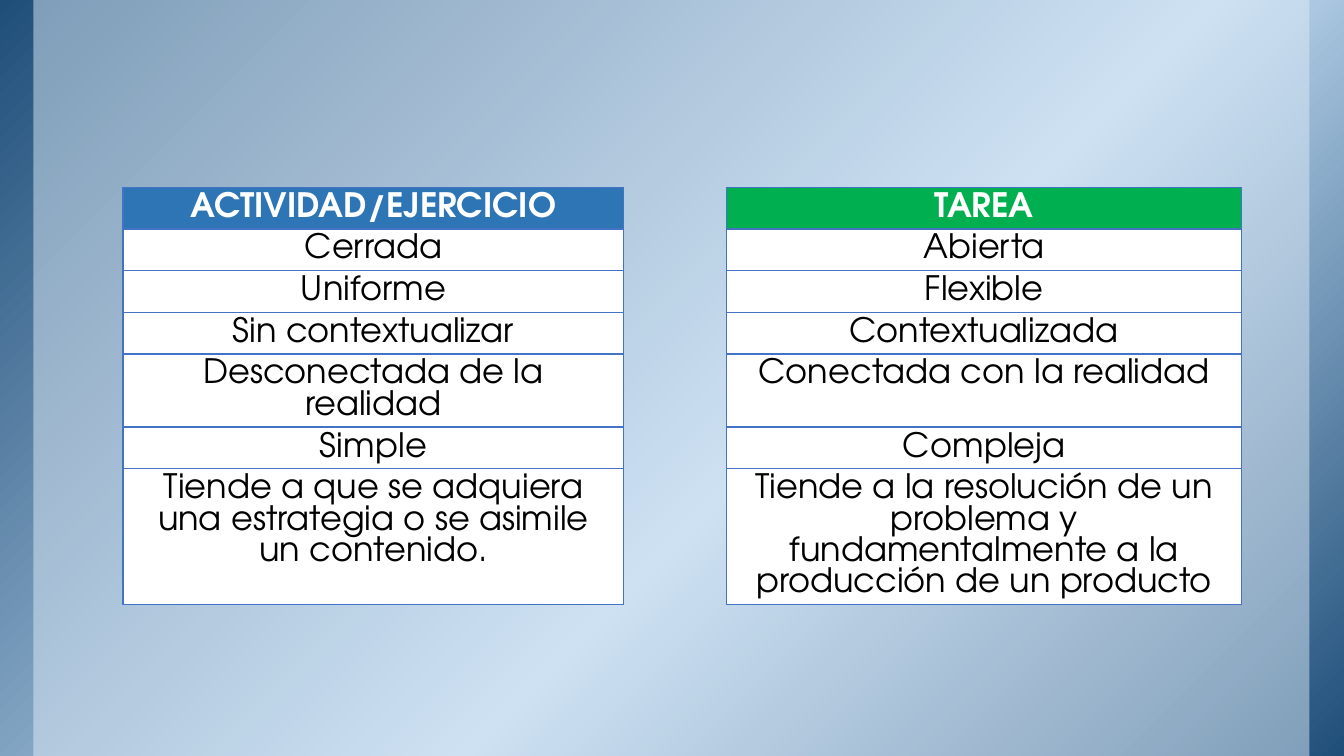
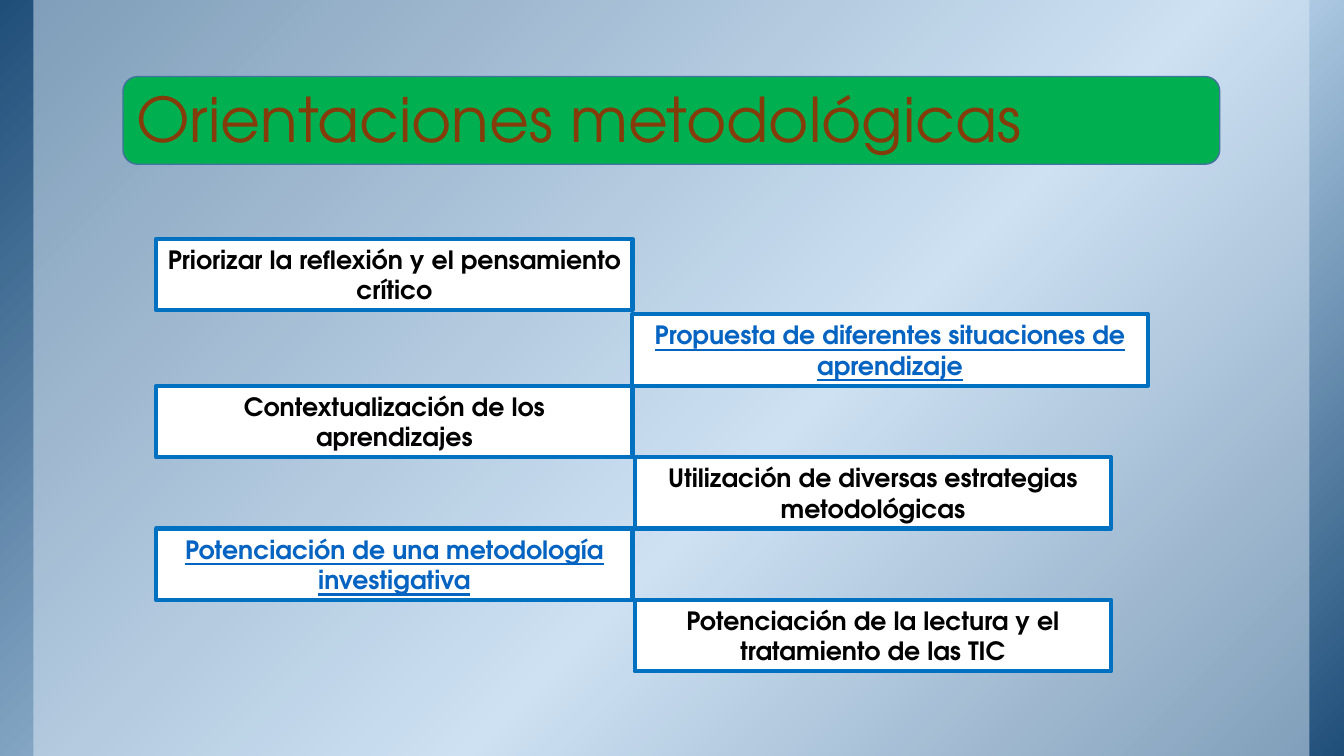
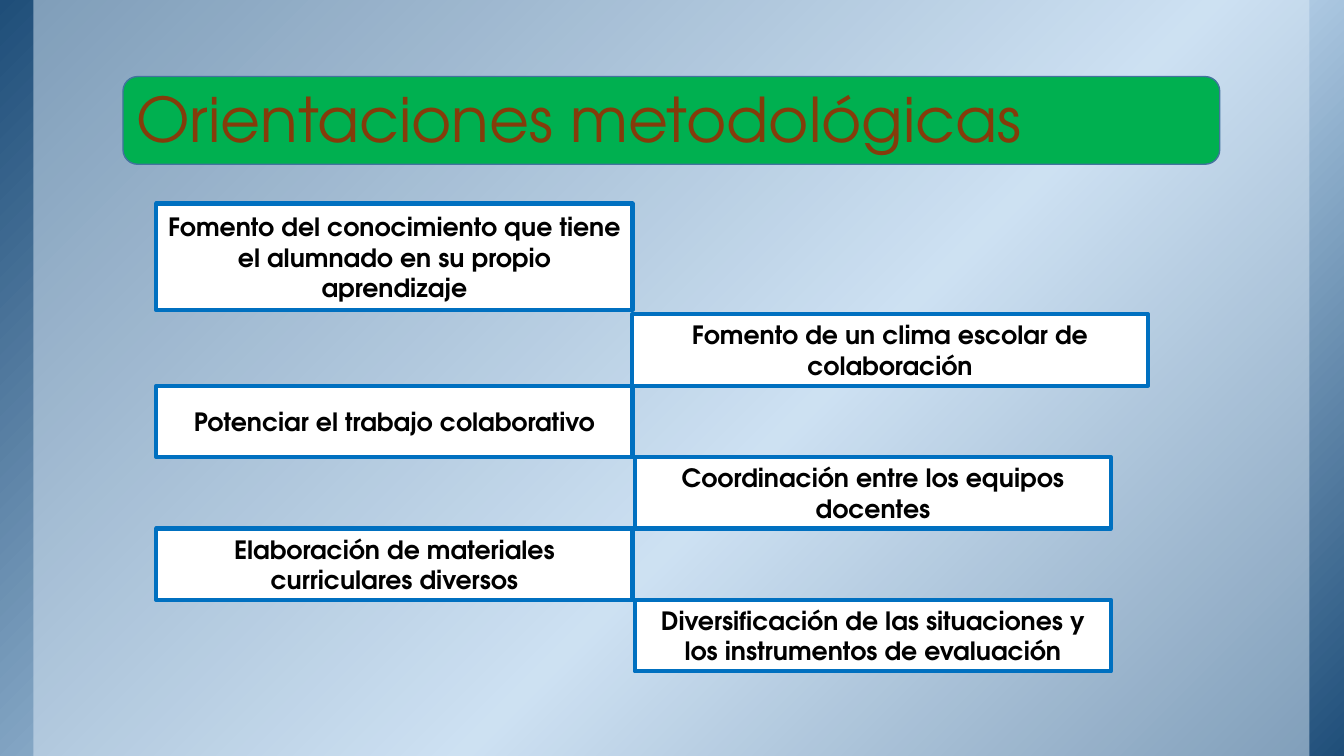
from lxml import etree
from pptx import Presentation
from pptx import util as u
from pptx.dml.color import RGBColor
from pptx.enum import shapes, text
from pptx.oxml import parse_xml
from pptx.oxml.ns import nsdecls, qn

NAVY = RGBColor(0x1F, 0x4E, 0x79)
SKY = RGBColor(0xBD, 0xD7, 0xEE)
MIST = RGBColor(0xDE, 0xEB, 0xF7)
GREEN = RGBColor(0x00, 0xB0, 0x50)
BANNER_LINE = RGBColor(0x43, 0x73, 0x9E)
BROWN = RGBColor(0x84, 0x3C, 0x0B)
BLUE = RGBColor(0x2E, 0x75, 0xB6)
BORDER = RGBColor(0x44, 0x72, 0xC4)
FRAME = RGBColor(0x00, 0x70, 0xC0)
LINK = RGBColor(0x05, 0x63, 0xC1)
WHITE = RGBColor(0xFF, 0xFF, 0xFF)
BLACK = RGBColor(0x00, 0x00, 0x00)

WIDTH, HEIGHT = 33.87, 19.05
FONT = "TeX Gyre Adventor"
PLAIN_STYLE = "{2D5ABB26-0587-4C30-8999-92F81FD0307C}"
TITLE_ONLY, BLANK = 5, 6
TITLE = "Orientaciones metodológicas"

COMPARISON = [
    ("ACTIVIDAD/EJERCICIO", "TAREA"),
    ("Cerrada", "Abierta"),
    ("Uniforme", "Flexible"),
    ("Sin contextualizar", "Contextualizada"),
    ("Desconectada de la realidad", "Conectada con la realidad"),
    ("Simple", "Compleja"),
    ("Tiende a que se adquiera una estrategia o se asimile un contenido.",
     "Tiende a la resolución de un problema y fundamentalmente a la "
     "producción de un producto"),
]
COLUMN_WIDTHS = [12.62, 2.59, 12.98]
ROW_HEIGHTS = [1.05, 1.05, 1.05, 1.05, 1.84, 1.05, 3.41]

METHODS = [
    "Priorizar la reflexión y el pensamiento crítico",
    "Propuesta de diferentes situaciones de aprendizaje",
    "Contextualización de los aprendizajes",
    "Utilización de diversas estrategias metodológicas",
    "Potenciación de una metodología investigativa",
    "Potenciación de la lectura y el tratamiento de las TIC",
]
PRACTICES = [
    "Fomento del conocimiento que tiene el alumnado en su propio aprendizaje",
    "Fomento de un clima escolar de colaboración",
    "Potenciar el trabajo colaborativo",
    "Coordinación entre los equipos docentes",
    "Elaboración de materiales curriculares diversos",
    "Diversificación de las situaciones y los instrumentos de evaluación",
]


class Deck:
    def __init__(self):
        self.file = Presentation()
        self.file.slide_width = u.Cm(WIDTH)
        self.file.slide_height = u.Cm(HEIGHT)
        self.page = None

    def add_page(self, layout):
        self.page = self.file.slides.add_slide(self.file.slide_layouts[layout])

    def style(self, paragraph, size, color, bold=False, underline=False,
              align=text.PP_ALIGN.CENTER):
        paragraph.alignment = align
        for span in paragraph.runs:
            span.font.name = FONT
            span.font.size = u.Pt(size)
            span.font.bold = bold
            span.font.underline = underline
            span.font.color.rgb = color

    def shape(self, kind, left, top, width, height, fill, line=None, weight=1):
        box = self.page.shapes.add_shape(
            kind, u.Cm(left), u.Cm(top), u.Cm(width), u.Cm(height))
        box.shadow.inherit = False
        box.fill.solid()
        box.fill.fore_color.rgb = fill
        if line is None:
            box.line.fill.background()
        else:
            box.line.color.rgb = line
            box.line.width = u.Pt(weight)
        return box

    def master_background(self):
        rectangle = shapes.MSO_SHAPE.RECTANGLE
        backdrop = self.shape(rectangle, 0, 0, WIDTH, HEIGHT, NAVY)
        stops = "".join(
            f'<a:gs pos="{place * 1000}"><a:srgbClr val="{color}"/></a:gs>'
            for place, color in ((0, NAVY), (58, SKY), (100, NAVY)))
        gradient = parse_xml(
            f'<a:gradFill {nsdecls("a")} rotWithShape="1"><a:gsLst>{stops}</a:gsLst>'
            '<a:lin ang="2700000" scaled="0"/></a:gradFill>')
        solid = backdrop.element.spPr.find(qn("a:solidFill"))
        solid.getparent().replace(solid, gradient)

        veil = self.shape(rectangle, 0.84, 0, 32.16, HEIGHT, MIST)
        color = veil.element.spPr.find(f'{qn("a:solidFill")}/{qn("a:srgbClr")}')
        etree.SubElement(color, qn("a:alpha")).set("val", "50000")

        tree = self.file.slide_master.shapes.element
        for index, layer in enumerate((backdrop, veil)):
            layer.element.nvSpPr.cNvPr.set("id", str(101 + index))
            tree.insert(2 + index, layer.element)

    def title(self, words):
        banner = self.shape(shapes.MSO_SHAPE.ROUNDED_RECTANGLE,
                            3.1, 1.93, 27.64, 2.21, GREEN, BANNER_LINE)
        self.page.shapes.element.insert(2, banner.element)
        title = self.page.shapes.title
        title.left, title.top = u.Cm(3.1), u.Cm(0.2)
        title.width, title.height = u.Cm(28.22), u.Cm(3.89)
        frame = title.text_frame
        frame.text = words
        frame.word_wrap = True
        frame.auto_size = text.MSO_AUTO_SIZE.NONE
        frame.vertical_anchor = text.MSO_ANCHOR.BOTTOM
        frame.margin_left = frame.margin_right = u.Cm(0.33)
        frame.margin_top = frame.margin_bottom = u.Cm(0.18)
        paragraph = frame.paragraphs[0]
        paragraph.line_spacing = 0.85
        self.style(paragraph, 44, BROWN, align=text.PP_ALIGN.LEFT)

    def step(self, words, left, top, width, height, linked):
        box = self.shape(shapes.MSO_SHAPE.RECTANGLE,
                         left, top, width, height, WHITE, FRAME, 3)
        frame = box.text_frame
        frame.text = words
        frame.word_wrap = True
        frame.vertical_anchor = text.MSO_ANCHOR.MIDDLE
        self.style(frame.paragraphs[0], 18, LINK if linked else BLACK,
                   bold=True, underline=linked)

    def staircase(self, steps, first_height=1.8, linked=()):
        pitch, second_top = 1.8, 7.92
        for index, words in enumerate(steps):
            left, width, height = (16 if index % 2 else 3.94), 12, pitch
            top = second_top + pitch * (index - 1)
            if index == 0:
                height = first_height
                top = 7.82 - height
            elif index == 1:
                left, width = 15.93, 13
            self.step(words, left, top, width, height, index in linked)

    def cell(self, cell, words, fill, color, bold, bottom):
        cell.text = words
        paragraph = cell.text_frame.paragraphs[0]
        paragraph.line_spacing = u.Pt(22.4)
        self.style(paragraph, 24, color, bold)
        cell.fill.solid()
        cell.fill.fore_color.rgb = fill
        properties = cell._tc.get_or_add_tcPr()
        for index, side in enumerate("LRTB"):
            weight = u.Pt(bottom if side == "B" else 1)
            properties.insert(index, parse_xml(
                f'<a:ln{side} {nsdecls("a")} w="{weight}"><a:solidFill>'
                f'<a:srgbClr val="{BORDER}"/></a:solidFill></a:ln{side}>'))

    def comparison(self, rows, left, top):
        frame = self.page.shapes.add_table(
            len(rows), len(COLUMN_WIDTHS), u.Cm(left), u.Cm(top),
            u.Cm(sum(COLUMN_WIDTHS)), u.Cm(sum(ROW_HEIGHTS)))
        table = frame.table
        table.first_row = table.horz_banding = False
        next(frame.element.iter(qn("a:tableStyleId"))).text = PLAIN_STYLE
        for column, width in zip(table.columns, COLUMN_WIDTHS):
            column.width = u.Cm(width)
        for index, (words, height) in enumerate(zip(rows, ROW_HEIGHTS)):
            table.rows[index].height = u.Cm(height)
            table.cell(index, 1).fill.background()
            header = index == 0
            for column, entry, accent in zip((0, 2), words, (BLUE, GREEN)):
                self.cell(table.cell(index, column), entry,
                          accent if header else WHITE,
                          WHITE if header else BLACK,
                          header, 2 if header else 1)


def main():
    deck = Deck()
    deck.add_page(BLANK)
    deck.master_background()
    deck.comparison(COMPARISON, 3.1, 4.72)

    deck.add_page(TITLE_ONLY)
    deck.title(TITLE)
    deck.staircase(METHODS, linked=(1, 4))

    deck.add_page(TITLE_ONLY)
    deck.title(TITLE)
    deck.staircase(PRACTICES, first_height=2.69)

    deck.file.save("out.pptx")


if __name__ == "__main__":
    main()
